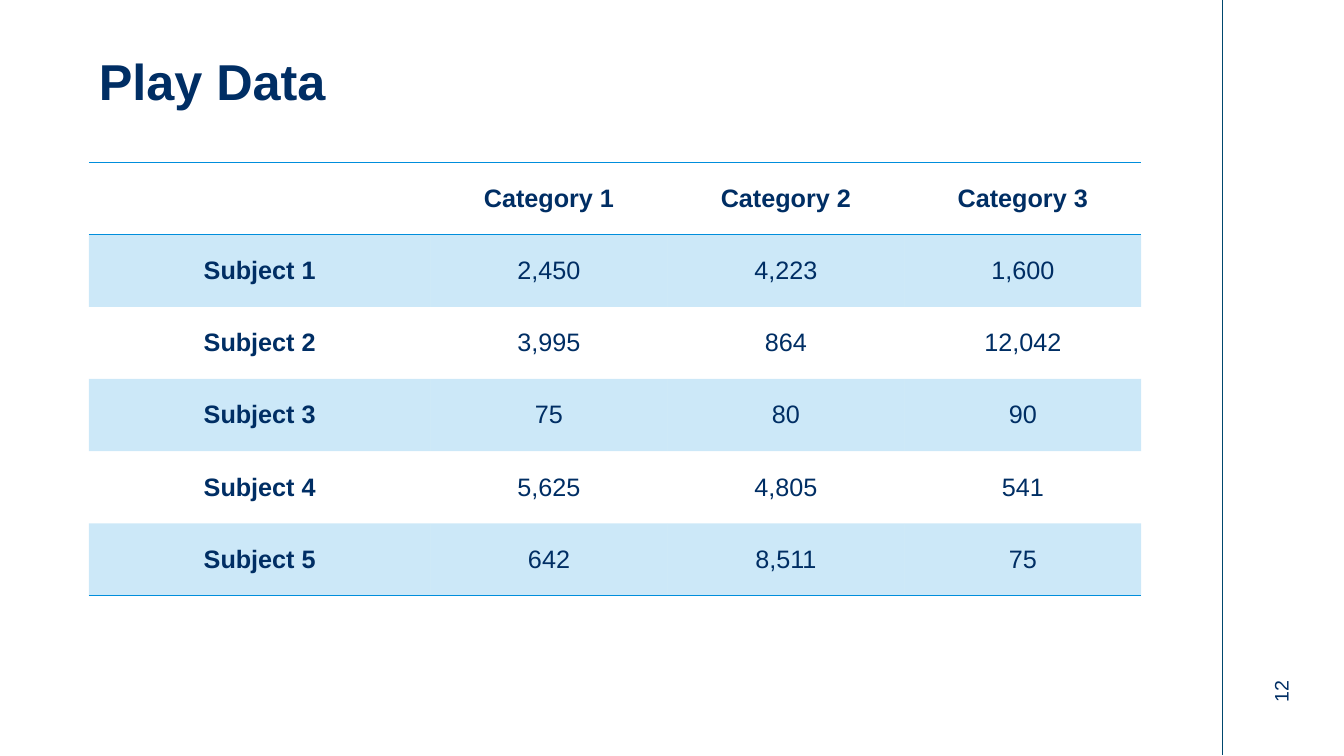
import pptx
import pptx.util
import pptx.dml.color
import pptx.enum.shapes
import pptx.enum.text
import pptx.oxml
import pptx.oxml.ns
from pptx.util import Cm

# Content
TITLE = "Play Data"
PAGE_NUMBER = "12"
ROWS = [
    ("", "Category 1", "Category 2", "Category 3"),
    ("Subject 1", "2,450", "4,223", "1,600"),
    ("Subject 2", "3,995", "864", "12,042"),
    ("Subject 3", "75", "80", "90"),
    ("Subject 4", "5,625", "4,805", "541"),
    ("Subject 5", "642", "8,511", "75"),
]

# Style and layout
NAVY = pptx.dml.color.RGBColor(0x00, 0x2E, 0x64)
TEAL = pptx.dml.color.RGBColor(0x00, 0x47, 0x6E)
BLUE = pptx.dml.color.RGBColor(0x00, 0x8E, 0xDC)
FONT = "Arial"
BAND_ALPHA = 20000
LEFT = Cm(2.24)
TABLE_TOP = Cm(4.09)
COLUMN_WIDTHS = [Cm(8.61)] + [Cm(5.97)] * 3
ROW_HEIGHT = Cm(1.82)
RULED_EDGES = {0, 1, len(ROWS)}
MIDDLE = pptx.enum.text.MSO_ANCHOR.MIDDLE
CENTER = pptx.enum.text.PP_ALIGN.CENTER


def style_text(para, size, bold=False):
    para.font.name = FONT
    para.font.size = pptx.util.Pt(size)
    para.font.bold = bold
    para.font.color.rgb = NAVY


def add_text(page, text, left, top, width, height, size, bold=False):
    box = page.shapes.add_textbox(left, top, width, height)
    box.text_frame.word_wrap = True
    box.text_frame.text = text
    style_text(box.text_frame.paragraphs[0], size, bold)
    return box


def set_borders(cell, ruled):
    """Draw the ruled sides and clear the others."""
    namespace = pptx.oxml.ns.nsdecls("a")
    properties = cell._tc.get_or_add_tcPr()
    for position, side in enumerate("LRTB"):
        if side in ruled:
            paint = f'<a:solidFill><a:srgbClr val="{BLUE}"/></a:solidFill>'
        else:
            paint = "<a:noFill/>"
        border = f'<a:ln{side} {namespace} w="12700">{paint}</a:ln{side}>'
        properties.insert(position, pptx.oxml.parse_xml(border))


def fill_cell(cell, banded):
    if not banded:
        cell.fill.background()
        return
    cell.fill.solid()
    cell.fill.fore_color.rgb = BLUE
    color = cell._tc.tcPr.find(".//" + pptx.oxml.ns.qn("a:srgbClr"))
    alpha = f'<a:alpha {pptx.oxml.ns.nsdecls("a")} val="{BAND_ALPHA}"/>'
    color.append(pptx.oxml.parse_xml(alpha))


def add_data_table(page):
    frame = page.shapes.add_table(
        len(ROWS), len(COLUMN_WIDTHS), LEFT, TABLE_TOP,
        sum(COLUMN_WIDTHS), ROW_HEIGHT * len(ROWS))
    table = frame.table
    for column, width in zip(table.columns, COLUMN_WIDTHS):
        column.width = width
    for r, values in enumerate(ROWS):
        table.rows[r].height = ROW_HEIGHT
        edges = {"T": r, "B": r + 1}
        ruled = {side for side, edge in edges.items() if edge in RULED_EDGES}
        for c, value in enumerate(values):
            cell = table.cell(r, c)
            cell.text_frame.text = value
            cell.vertical_anchor = MIDDLE
            para = cell.text_frame.paragraphs[0]
            para.alignment = CENTER
            style_text(para, 18, bold=r == 0 or c == 0)
            fill_cell(cell, banded=r % 2 == 1)
            set_borders(cell, ruled)


def main():
    deck = pptx.Presentation()
    deck.slide_width, deck.slide_height = Cm(33.87), Cm(19.05)
    page = deck.slides.add_slide(deck.slide_layouts[6])

    # Margin line
    margin = page.shapes.add_connector(
        pptx.enum.shapes.MSO_CONNECTOR.STRAIGHT,
        Cm(30.81), 0, Cm(30.81), Cm(19.03))
    margin.line.color.rgb = TEAL
    margin.line.width = pptx.util.Pt(0.5)
    margin._element.spPr.append(pptx.oxml.parse_xml(
        f'<a:effectLst {pptx.oxml.ns.nsdecls("a")}/>'))

    # Title and table
    add_text(page, TITLE, LEFT, Cm(1.14), Cm(26.29), Cm(3.99), 36, bold=True)
    add_data_table(page)

    # Page number, reading upwards
    number = add_text(page, PAGE_NUMBER,
                      Cm(31.32), Cm(15.65), Cm(2.97), Cm(1.65), 14)
    number.text_frame.margin_top = 0
    number.rotation = 270

    deck.save("out.pptx")


if __name__ == "__main__":
    main()
